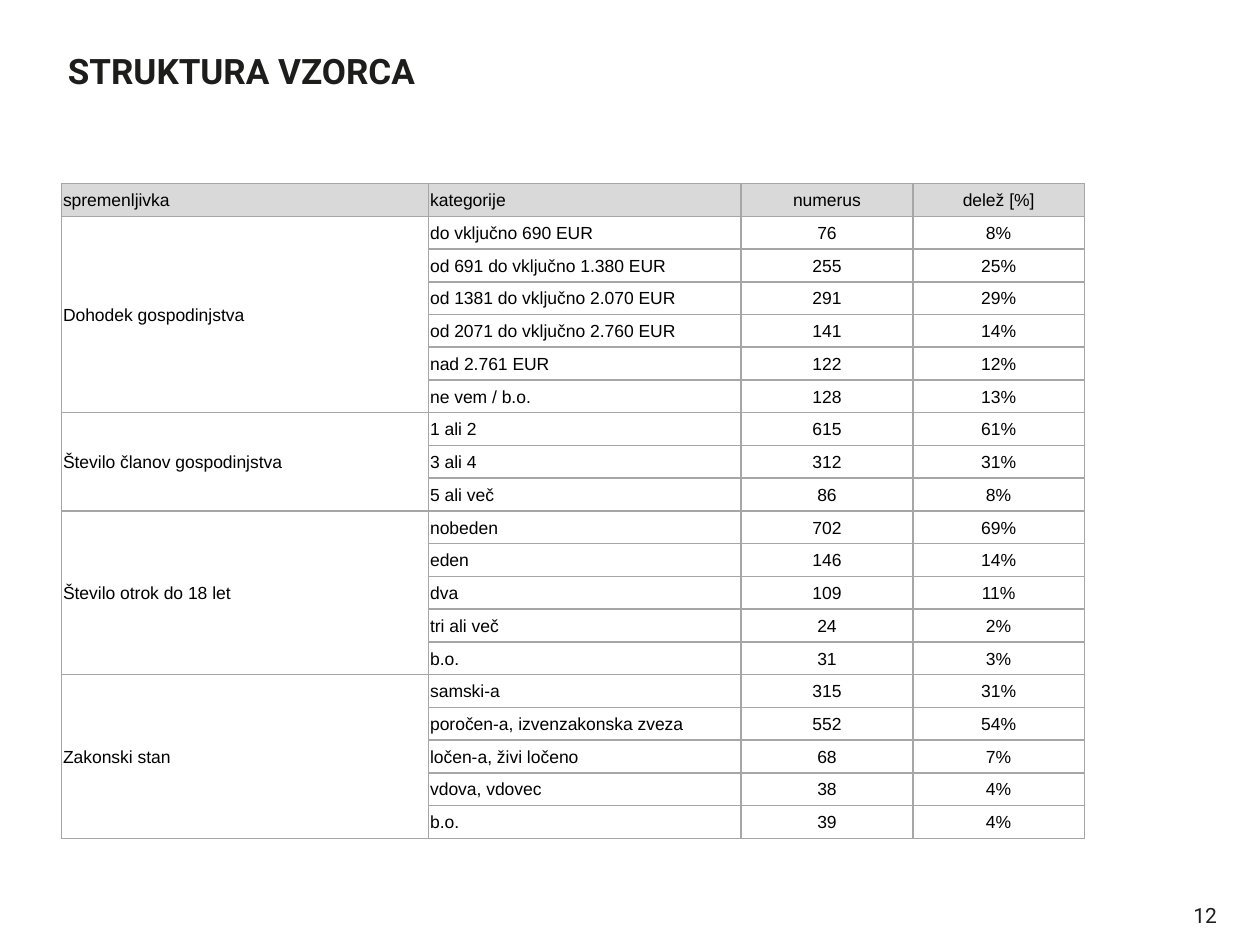
import dataclasses

import lxml.etree
import pptx
import pptx.dml.color
import pptx.enum.text
import pptx.oxml.ns
import pptx.util

Cm = pptx.util.Cm
Pt = pptx.util.Pt
ALIGN = pptx.enum.text.PP_ALIGN

HUES = {"ink": "1D1D1B", "text": "000000", "head": "D9D9D9", "line": "A6A6A6"}
HEADS = ("spremenljivka", "kategorije", "numerus", "delež [%]")
WIDTHS = (7.4, 6.3, 3.46, 3.46)
ROW = 0.66


@dataclasses.dataclass
class Label:
    text: str
    left: float
    top: float
    width: float
    height: float
    size: int
    bold: bool = False


@dataclasses.dataclass
class Group:
    name: str
    rows: list[tuple[str, int, int]]  # category, count, percent


LABELS = [
    Label("STRUKTURA VZORCA", 1.24, 0.86, 20.62, 2.67, 20, True),
    Label("12", 23.93, 18.06, 1.07, 0.76, 12),
]

GROUPS = [
    Group("Dohodek gospodinjstva", [
        ("do vključno 690 EUR", 76, 8),
        ("od 691 do vključno 1.380 EUR", 255, 25),
        ("od 1381 do vključno 2.070 EUR", 291, 29),
        ("od 2071 do vključno 2.760 EUR", 141, 14),
        ("nad 2.761 EUR", 122, 12),
        ("ne vem / b.o.", 128, 13),
    ]),
    Group("Število članov gospodinjstva", [
        ("1 ali 2", 615, 61),
        ("3 ali 4", 312, 31),
        ("5 ali več", 86, 8),
    ]),
    Group("Število otrok do 18 let", [
        ("nobeden", 702, 69),
        ("eden", 146, 14),
        ("dva", 109, 11),
        ("tri ali več", 24, 2),
        ("b.o.", 31, 3),
    ]),
    Group("Zakonski stan", [
        ("samski-a", 315, 31),
        ("poročen-a, izvenzakonska zveza", 552, 54),
        ("ločen-a, živi ločeno", 68, 7),
        ("vdova, vdovec", 38, 4),
        ("b.o.", 39, 4),
    ]),
]


def set_font(font, face: str, size: int, hue: str, bold: bool = False) -> None:
    font.name, font.size, font.bold = face, Pt(size), bold
    font.color.rgb = pptx.dml.color.RGBColor.from_string(HUES[hue])


def add_label(slide, label: Label) -> None:
    box = slide.shapes.add_textbox(
        Cm(label.left), Cm(label.top), Cm(label.width), Cm(label.height))
    frame = box.text_frame
    frame.word_wrap = True
    frame.margin_left = frame.margin_right = Cm(0.13)
    frame.margin_top = frame.margin_bottom = Cm(0.13)
    frame.text = label.text
    set_font(frame.paragraphs[0].font, "Roboto", label.size, "ink", label.bold)


def add_edges(cell) -> None:
    props = cell._tc.get_or_add_tcPr()
    name = pptx.oxml.ns.qn
    for side in ("lnL", "lnR", "lnT", "lnB"):
        line = lxml.etree.SubElement(props, name(f"a:{side}"), w=str(Pt(1)))
        fill = lxml.etree.SubElement(line, name("a:solidFill"))
        lxml.etree.SubElement(fill, name("a:srgbClr"), val=HUES["line"])


def fill_cell(cell, text: str, head: bool, center: bool) -> None:
    add_edges(cell)
    if head:
        cell.fill.solid()
        cell.fill.fore_color.rgb = pptx.dml.color.RGBColor.from_string(HUES["head"])
    else:
        cell.fill.background()
    cell.margin_left = cell.margin_right = cell.margin_top = Cm(0.03)
    cell.margin_bottom = 0
    cell.vertical_anchor = pptx.enum.text.MSO_ANCHOR.MIDDLE
    cell.text = text
    para = cell.text_frame.paragraphs[0]
    para.alignment = ALIGN.CENTER if center else ALIGN.LEFT
    set_font(para.font, "Arial", 10, "text")


def add_sample(slide, groups: list[Group]) -> None:
    lines = [HEADS]
    for group in groups:
        for i, (kind, count, share) in enumerate(group.rows):
            lines.append((group.name if i == 0 else "", kind, str(count), f"{share}%"))

    table = slide.shapes.add_table(
        len(lines), len(WIDTHS), Cm(1.24), Cm(3.7),
        Cm(sum(WIDTHS)), Cm(ROW * len(lines))).table
    table.first_row = table.horz_banding = False
    for col, width in zip(table.columns, WIDTHS):
        col.width = Cm(width)
    for r, line in enumerate(lines):
        table.rows[r].height = Cm(ROW)
        for c, text in enumerate(line):
            fill_cell(table.cell(r, c), text, r == 0, c > 1)

    # One tall name cell for each group
    first = 1
    for group in groups:
        last = first + len(group.rows) - 1
        table.cell(first, 0).merge(table.cell(last, 0))
        first = last + 1


def main() -> None:
    deck = pptx.Presentation()
    deck.slide_width, deck.slide_height = Cm(25.4), Cm(19.05)
    slide = deck.slides.add_slide(deck.slide_layouts[6])

    # Title and page number
    for label in LABELS:
        add_label(slide, label)

    # Sample table
    add_sample(slide, GROUPS)
    deck.save("out.pptx")


if __name__ == "__main__":
    main()
